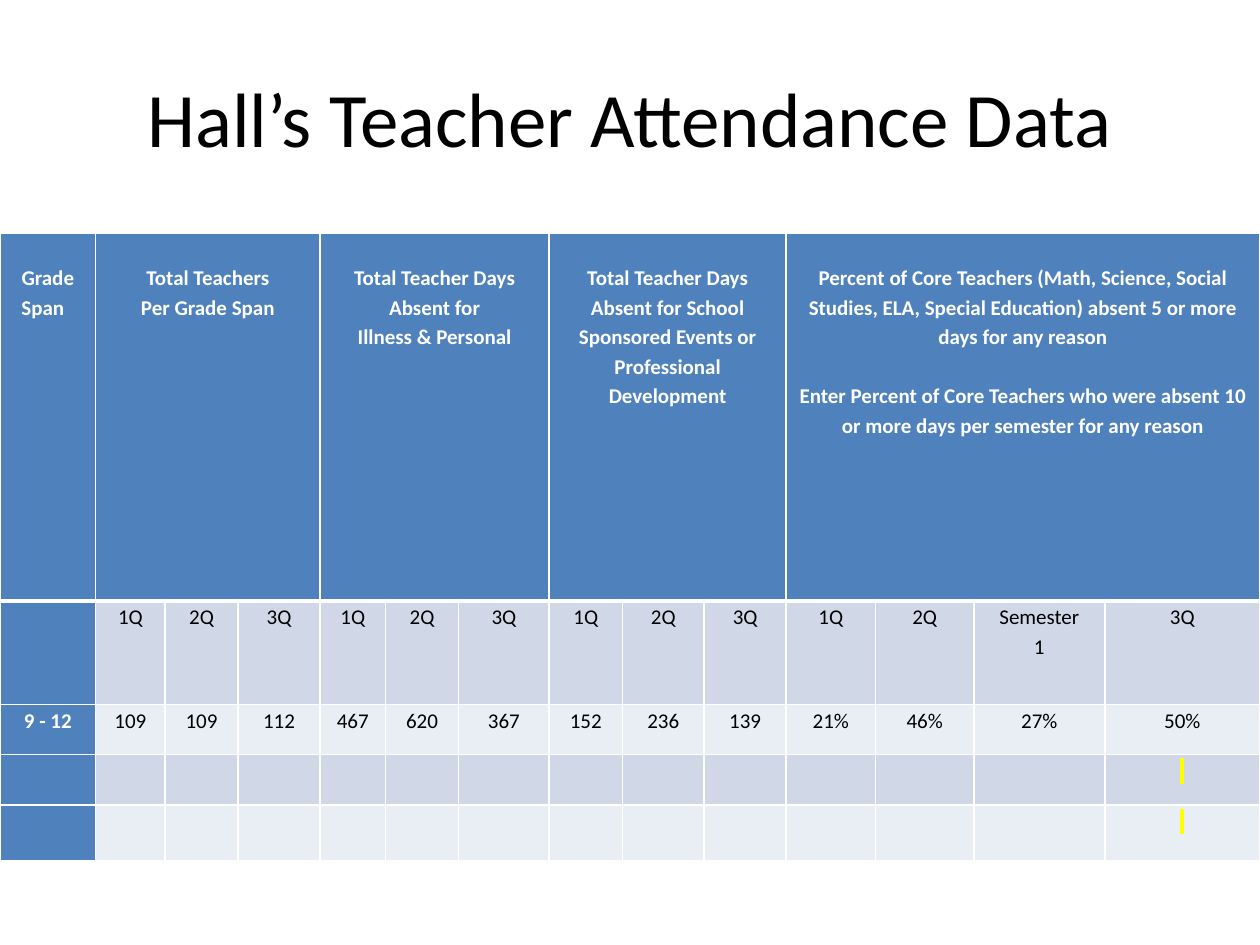
import pptx
import pptx.util
import pptx.dml.color
import pptx.enum.text
import pptx.oxml
import pptx.oxml.ns
import lxml.etree

Inches, Pt = pptx.util.Inches, pptx.util.Pt
ALIGN = pptx.enum.text.PP_ALIGN
BLUE, BANDS, WHITE, BLACK, YELLOW = "4F81BD", ("E9EDF4", "D0D8E8"), "FFFFFF", "000000", "FFFF00"
COL_WIDTHS = [0.76, 0.55, 0.58, 0.65, 0.52, 0.58, 0.72, 0.58, 0.65, 0.65, 0.71, 0.78, 1.04, 1.23]
ROW_HEIGHTS = [2.92, 0.82, 0.4, 0.4, 0.44]
HEADERS = [
    (1, ["Grade", "Span"]),
    (3, ["Total Teachers", "Per Grade Span"]),
    (3, ["Total Teacher Days Absent for", "Illness & Personal"]),
    (3, ["Total Teacher Days Absent for School Sponsored Events or Professional Development"]),
    (4, ["Percent of Core Teachers (Math, Science, Social Studies, ELA, Special Education) "
         "absent 5 or more days for any reason",
         "Enter Percent of Core Teachers who were absent 10 or more days per semester for any reason"]),
]
QUARTERS = ["1Q", "2Q", "3Q"]
BODY = [
    [""] + QUARTERS * 3 + ["1Q", "2Q", "Semester\n1", "3Q"],
    ["9 - 12", "109", "109", "112", "467", "620", "367", "152", "236", "139", "21%", "46%", "27%", "50%"],
    [""] * 13 + ["\u00a0"],
    [""] * 13 + ["\u00a0"],
]


def rgb(color):
    """Turn a hex string into a colour."""
    return pptx.dml.color.RGBColor.from_string(color)


def set_attrs(obj, **values):
    """Set several attributes of one object."""
    for name, value in values.items():
        setattr(obj, name, value)


def add_run(p, text, size, color, bold=False):
    """Add a formatted run to a paragraph."""
    r = p.add_run()
    r.text = text
    set_attrs(r.font, size=Pt(size), bold=bold, name="Calibri")
    r.font.color.rgb = rgb(color)
    return r


def highlight(r, color):
    """Mark a run with a highlight colour."""
    mark = lxml.etree.Element(pptx.oxml.ns.qn("a:highlight"))
    lxml.etree.SubElement(mark, pptx.oxml.ns.qn("a:srgbClr"), val=color)
    r.font.fill._xPr.find(pptx.oxml.ns.qn("a:solidFill")).addnext(mark)


def set_borders(cell, widths):
    """Give a cell white borders, with widths in points by side."""
    tc_pr = cell._tc.get_or_add_tcPr()
    for side, width in widths.items():
        ln = lxml.etree.SubElement(tc_pr, pptx.oxml.ns.qn(f"a:ln{side}"), w=str(Pt(width)))
        fill = lxml.etree.SubElement(ln, pptx.oxml.ns.qn("a:solidFill"))
        lxml.etree.SubElement(fill, pptx.oxml.ns.qn("a:srgbClr"), val=WHITE)


def style_cell(cell, row, col):
    """Set the margins, borders and fill of a cell by its place in the table."""
    set_attrs(cell, margin_left=Inches(0.06), margin_right=Inches(0.06),
              margin_top=Inches(0 if row else 0.23), margin_bottom=0)
    set_borders(cell, {"L": 1, "R": 1, "T": 3 if row == 1 else 1, "B": 1 if row else 3})
    cell.fill.solid()
    cell.fill.fore_color.rgb = rgb(BLUE if row == 0 or col == 0 else BANDS[row % 2])


def write_cell(cell, lines, color, bold):
    """Write centred 12-point lines into a cell."""
    tf = cell.text_frame
    for i, line in enumerate(lines):
        p = tf.add_paragraph() if i else tf.paragraphs[0]
        set_attrs(p, alignment=ALIGN.CENTER, line_spacing=1.15)
        r = add_run(p, line, 12, color, bold)
        if line == "\u00a0":
            highlight(r, YELLOW)


def add_title(slide, left, top, width, height):
    """Place the slide title in its box."""
    sp = slide.shapes.title
    set_attrs(sp, left=left, top=top, width=width, height=height)
    tf = sp.text_frame
    tf.vertical_anchor = pptx.enum.text.MSO_ANCHOR.MIDDLE
    p = tf.paragraphs[0]
    p.alignment = ALIGN.CENTER
    add_run(p, "Hall’s Teacher Attendance Data", 44, BLACK)


def fill_header(table):
    """Merge and write the header groups."""
    col = 0
    for span, lines in HEADERS:
        cell = table.cell(0, col)
        if span > 1:
            cell.merge(table.cell(0, col + span - 1))
        write_cell(cell, lines, WHITE, True)
        col += span
    span_line = table.cell(0, 0).text_frame.paragraphs[1]
    span_line.alignment = ALIGN.LEFT
    span_line._p.get_or_add_pPr().set("marL", str(Inches(0.11)))
    cell.text_frame.paragraphs[1].space_before = Pt(17)


def add_attendance_table(slide, left, top, width, height):
    """Build the attendance table in its box."""
    table = slide.shapes.add_table(len(ROW_HEIGHTS), len(COL_WIDTHS), left, top, width, height).table
    for column, w in zip(table.columns, COL_WIDTHS):
        column.width = Inches(w)
    for row, h in zip(table.rows, ROW_HEIGHTS):
        row.height = Inches(h)
    for r in range(len(ROW_HEIGHTS)):
        for c in range(len(COL_WIDTHS)):
            style_cell(table.cell(r, c), r, c)
    fill_header(table)
    for r, values in enumerate(BODY, 1):
        for c, value in enumerate(values):
            if value:
                write_cell(table.cell(r, c), value.split("\n"), BLACK if c else WHITE, c == 0)


def main():
    """Build and save the slide."""
    prs = pptx.Presentation()
    set_attrs(prs, slide_width=Inches(10), slide_height=Inches(7.5))
    slide = prs.slides.add_slide(prs.slide_layouts[5])
    add_title(slide, Inches(0.5), Inches(0.3), Inches(9), Inches(1.25))
    add_attendance_table(slide, 0, Inches(1.85), Inches(10), Inches(4.98))
    prs.save("out.pptx")


if __name__ == "__main__":
    main()
